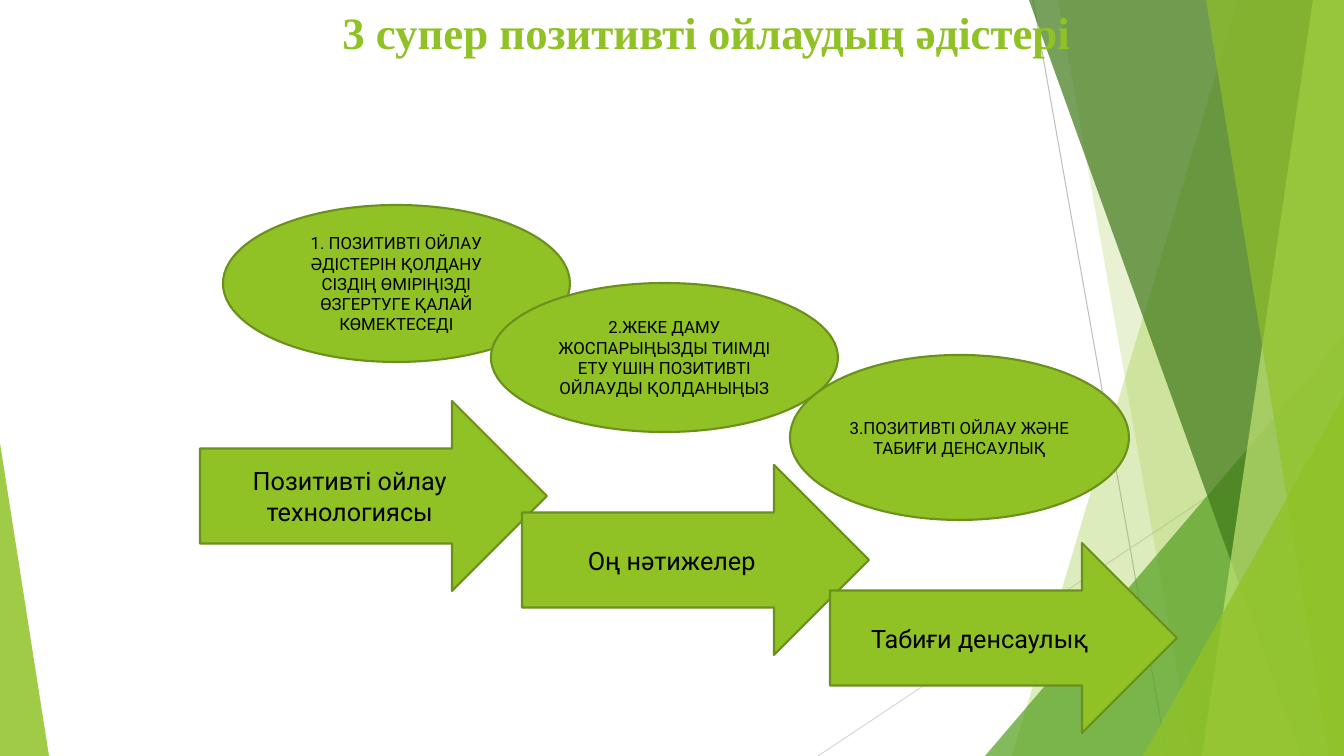
from lxml.etree import SubElement
from pptx import Presentation
from pptx.dml.color import RGBColor
from pptx.enum.shapes import MSO_CONNECTOR as Link, MSO_SHAPE as Kind
from pptx.enum.text import MSO_ANCHOR as Anchor, PP_ALIGN as Align
from pptx.oxml.ns import qn
from pptx.util import Pt

PX = 914400 / 100.8
WIDE, HIGH = 1344, 756

LIME = RGBColor(0x90, 0xC2, 0x26)
OLIVE = RGBColor(0x6B, 0x90, 0x1C)
GREEN = RGBColor(0x54, 0xA0, 0x21)
DARK = RGBColor(0x3F, 0x78, 0x19)
PALE = RGBColor(0xC0, 0xE4, 0x74)
GREY = RGBColor(0xBF, 0xBF, 0xBF)
MIST = RGBColor(0xD9, 0xD9, 0xD9)
BLACK = RGBColor(0, 0, 0)

TITLE = "3 супер позитивті ойлаудың әдістері"
TITLE_BOX = (278, 0, 857, 126)
TITLE_FONT = {"name": "Times New Roman", "size": Pt(32), "bold": True}
OVAL_FONT = {"name": "Roboto", "size": Pt(12)}
ARROW_FONT = {"name": "Roboto", "size": Pt(18)}

LINES = [((1033, 0, 1167, HIGH), GREY), ((WIDE, 406, 818, HIGH), MIST)]
DECOR = [
    ("band", (1238, 1012), LIME, 30),
    ("band", (1058, 1192), LIME, 20),
    ("right", (985, 336), GREEN, 72),
    ("band", (1029, 1301), DARK, 70),
    ("band", (1313, 1202), PALE, 70),
    ("band", (1206, 1329), LIME, 65),
    ("right", (1143, 396), LIME, 80),
    ("left", (49, 443), LIME, 85),
]
OVALS = [
    ((223, 205, 347, 157), "1. ПОЗИТИВТІ ОЙЛАУ ӘДІСТЕРІН ҚОЛДАНУ СІЗДІҢ "
     "ӨМІРІҢІЗДІ ӨЗГЕРТУГЕ ҚАЛАЙ КӨМЕКТЕСЕДІ"),
    ((491, 283, 347, 149), "2.ЖЕКЕ ДАМУ ЖОСПАРЫҢЫЗДЫ ТИІМДІ ЕТУ ҮШІН "
     "ПОЗИТИВТІ ОЙЛАУДЫ ҚОЛДАНЫҢЫЗ"),
    ((790, 355, 339, 165), "3.ПОЗИТИВТІ ОЙЛАУ ЖӘНЕ ТАБИҒИ ДЕНСАУЛЫҚ"),
]
ARROW_SIZE = (347, 190)
ARROWS = [
    ((200, 401), "Позитивті ойлау технологиясы"),
    ((522, 465), "Оң нәтижелер"),
    ((830, 543), "Табиғи денсаулық"),
]


def emu(box):
    return [round(n * PX) for n in box]


def write(shape, text, look, color, anchor):
    frame = shape.text_frame
    frame.word_wrap = True
    frame.vertical_anchor = anchor
    para = frame.paragraphs[0]
    para.alignment = Align.CENTER
    run = para.add_run()
    run.text = text
    for key, value in look.items():
        setattr(run.font, key, value)
    run.font.color.rgb = color


def add_line(box, color):
    line = slide.shapes.add_connector(Link.STRAIGHT, *emu(box))
    line.line.color.rgb = color
    line.line.width = Pt(0.75)
    SubElement(line.element.spPr, qn("a:effectLst"))


def add_decor(kind, ends, color, alpha):
    x, y = ends
    if kind == "band":
        pen = slide.shapes.build_freeform(x, 0, scale=PX)
        pen.add_line_segments([(WIDE, 0), (WIDE, HIGH), (y, HIGH)])
        shape = pen.convert_to_shape()
    else:
        left, right = (x, WIDE) if kind == "right" else (0, x)
        box = (left, y, right - left, HIGH - y)
        shape = slide.shapes.add_shape(Kind.ISOSCELES_TRIANGLE, *emu(box))
        shape.adjustments[0] = 1 if kind == "right" else 0
    shape.shadow.inherit = False
    shape.line.fill.background()
    shape.fill.solid()
    shape.fill.fore_color.rgb = color
    tone = shape.element.spPr.find(qn("a:solidFill")).find(qn("a:srgbClr"))
    SubElement(tone, qn("a:alpha")).set("val", str(alpha * 1000))


def add_step(kind, box, text, look):
    shape = slide.shapes.add_shape(kind, *emu(box))
    shape.shadow.inherit = False
    shape.fill.solid()
    shape.fill.fore_color.rgb = LIME
    shape.line.color.rgb = OLIVE
    shape.line.width = Pt(1.5)
    write(shape, text, look, BLACK, Anchor.MIDDLE)


deck = Presentation()
deck.slide_width, deck.slide_height = emu((WIDE, HIGH))
slide = deck.slides.add_slide(deck.slide_layouts[5])

for box, color in LINES:
    add_line(box, color)
for part in DECOR:
    add_decor(*part)

title = slide.shapes.title
title.left, title.top, title.width, title.height = emu(TITLE_BOX)
write(title, TITLE, TITLE_FONT, LIME, Anchor.TOP)
slide.shapes.element.append(title.element)

for box, text in OVALS:
    add_step(Kind.OVAL, box, text, OVAL_FONT)
for spot, text in ARROWS:
    add_step(Kind.RIGHT_ARROW, spot + ARROW_SIZE, text, ARROW_FONT)

deck.save("out.pptx")
